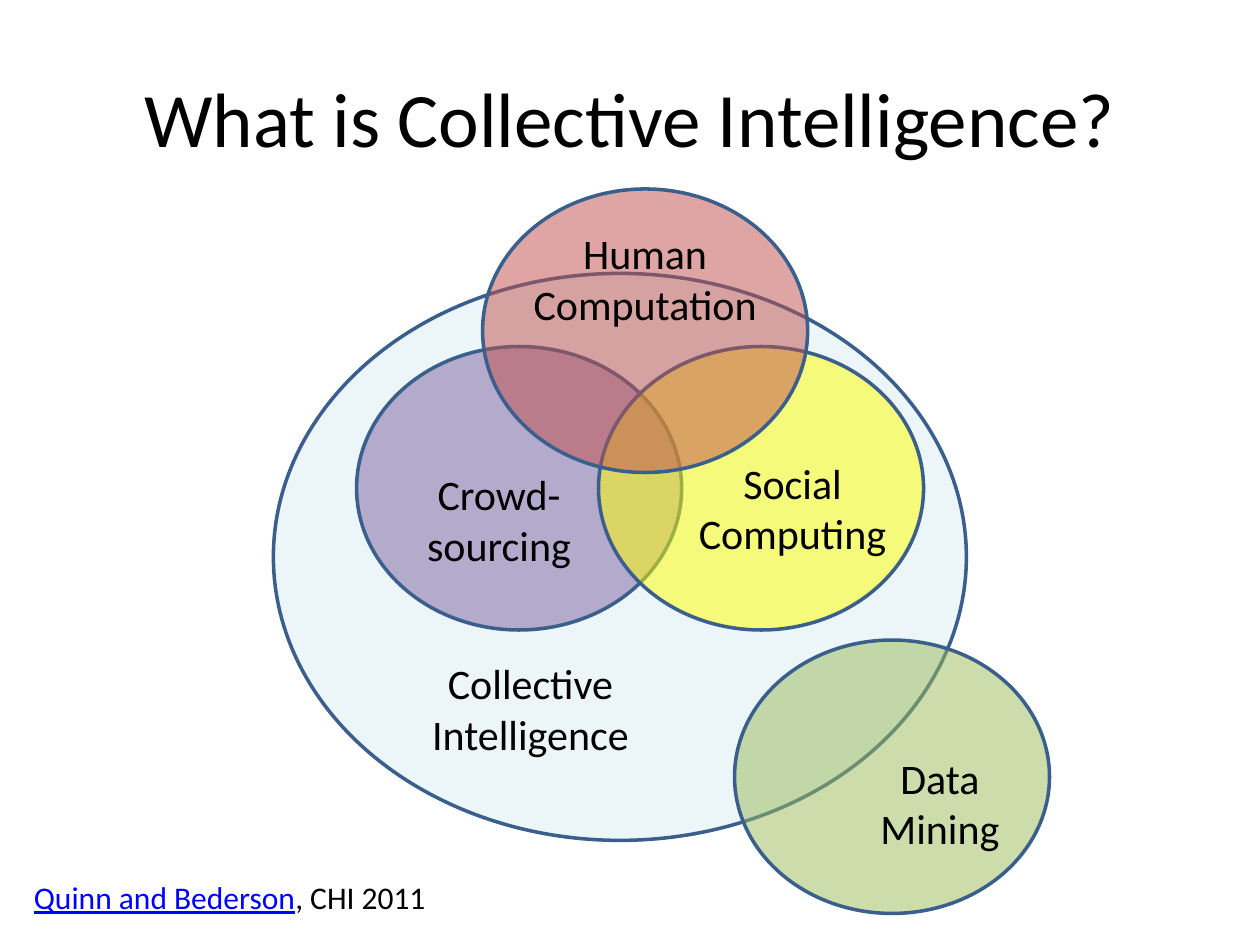
from lxml import etree
from pptx import Presentation
from pptx.dml.color import RGBColor
from pptx.enum.shapes import MSO_SHAPE
from pptx.enum.text import MSO_ANCHOR as Anchor, MSO_AUTO_SIZE as AutoSize, PP_ALIGN as Align
from pptx.oxml.ns import qn
from pptx.util import Inches, Pt

BLACK = RGBColor(0x00, 0x00, 0x00)
LINK_BLUE = RGBColor(0x00, 0x00, 0xFF)
OUTLINE = RGBColor(0x3A, 0x5F, 0x8C)
PALE_BLUE = RGBColor(0xDB, 0xEE, 0xF4)
PURPLE = RGBColor(0x80, 0x64, 0xA2)
YELLOW = RGBColor(0xFF, 0xFF, 0x00)
RED = RGBColor(0xC0, 0x50, 0x4D)
GREEN = RGBColor(0x9B, 0xBB, 0x59)

SMALL_CIRCLE = (2.58, 2.25)
LABEL_SIZE = (2.08, 0.91)

# left, top, (width, height), fill
CIRCLES = [
    (2.17, 2.17, (5.5, 4.5), PALE_BLUE),
    (2.83, 2.75, SMALL_CIRCLE, PURPLE),
    (4.75, 2.75, SMALL_CIRCLE, YELLOW),
    (3.83, 1.5, SMALL_CIRCLE, RED),
    (5.83, 5.08, (2.5, 2.17), GREEN),
]

# left, top, text
LABELS = [
    (3.17, 5.17, "Collective Intelligence"),
    (2.92, 3.67, "Crowd-\nsourcing"),
    (4.08, 1.76, "Human Computation"),
    (5.25, 3.58, "Social Computing"),
    (6.42, 5.92, "Data\nMining"),
]


class VennSlide:
    """Style and drawing methods for the current slide."""

    font_name = "Calibri"
    line_width = Pt(2)
    opacity = 51

    def __init__(self, presentation):
        self.slide = presentation.slides.add_slide(presentation.slide_layouts[6])
        self.shapes = self.slide.shapes

    def start_group(self):
        self.group_shapes = self.shapes.add_group_shape().shapes

    def circle(self, left, top, size, color):
        """Add a translucent ellipse to the diagram group."""
        shape = self.group_shapes.add_shape(
            MSO_SHAPE.OVAL, *map(Inches, (left, top, *size)))
        shape.shadow.inherit = False
        shape.fill.solid()
        shape.fill.fore_color.rgb = color
        shape.line.color.rgb = OUTLINE
        shape.line.width = self.line_width
        color_element = shape.fill._xPr.find(qn("a:solidFill"))[0]
        alpha = etree.SubElement(color_element, qn("a:alpha"))
        alpha.set("val", str(self.opacity * 1000))

    def text(self, shapes, box, parts, size, align=Align.CENTER, **frame_format):
        """Add one paragraph; parts are (text, font format) pairs."""
        frame = shapes.add_textbox(*map(Inches, box)).text_frame
        frame_format = {"word_wrap": True, "auto_size": AutoSize.SHAPE_TO_FIT_TEXT,
                        **frame_format}
        for name, value in frame_format.items():
            setattr(frame, name, value)
        paragraph = frame.paragraphs[0]
        paragraph.alignment = align
        for content, font_format in parts:
            for index, line in enumerate(content.split("\n")):
                if index:
                    paragraph.add_line_break()
                self.run(paragraph, line, size, font_format)

    def run(self, paragraph, content, size, font_format):
        run = paragraph.add_run()
        run.text = content
        font_format = {"name": self.font_name, "size": Pt(size), **font_format}
        run.font.color.rgb = font_format.pop("color", BLACK)
        for name, value in font_format.items():
            setattr(run.font, name, value)

    def title(self, content):
        self.text(self.shapes, (0.5, 0.3, 9, 1.25), [(content, {})], 44,
                  auto_size=AutoSize.NONE, vertical_anchor=Anchor.MIDDLE)

    def label(self, left, top, content):
        self.text(self.group_shapes, (left, top, *LABEL_SIZE), [(content, {})], 24)

    def citation(self, source, venue):
        parts = [(source, {"color": LINK_BLUE, "underline": True}), (venue, {})]
        self.text(self.shapes, (0.17, 6.92, 3.42, 0.4), parts, 18, Align.LEFT)


def main():
    presentation = Presentation()
    presentation.slide_width = Inches(10)
    presentation.slide_height = Inches(7.5)

    venn = VennSlide(presentation)
    venn.title("What is Collective Intelligence?")
    venn.start_group()
    for circle in CIRCLES:
        venn.circle(*circle)
    for label in LABELS:
        venn.label(*label)
    venn.citation("Quinn and Bederson", ", CHI 2011")

    presentation.save("out.pptx")


if __name__ == "__main__":
    main()
